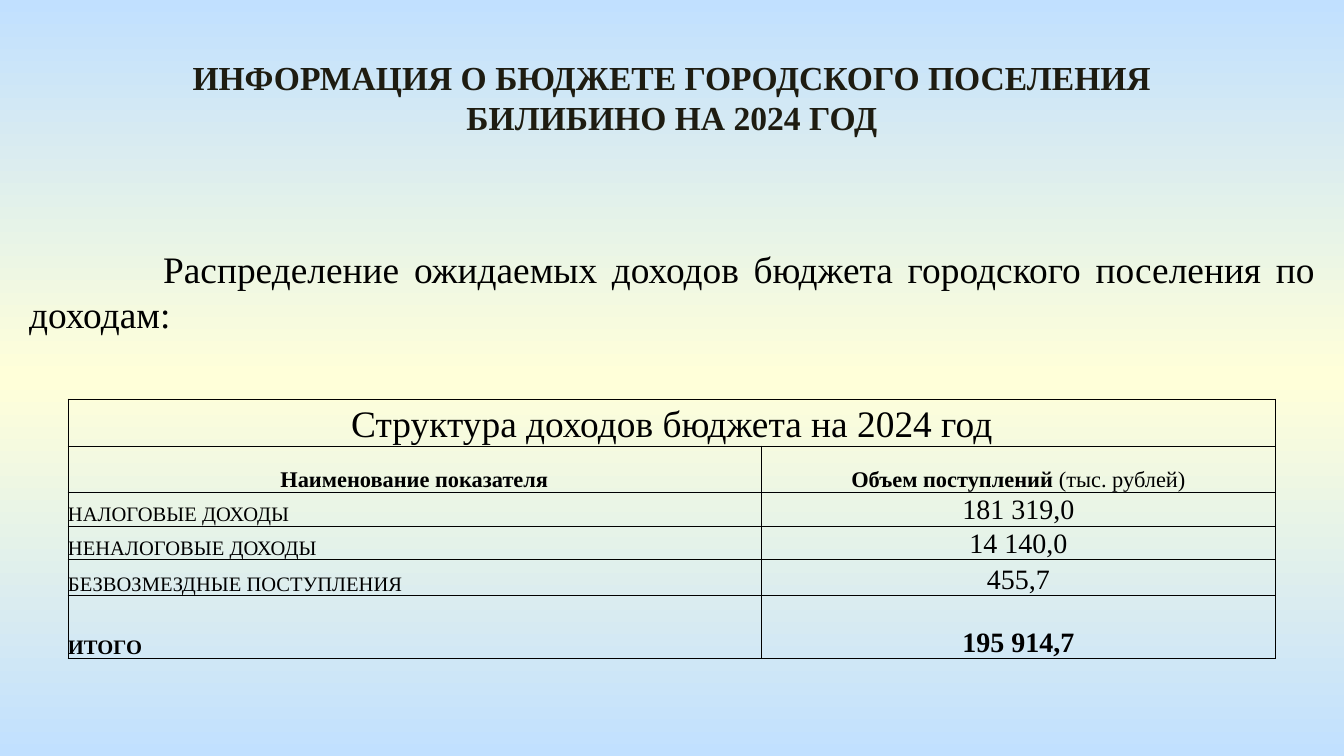
from copy import deepcopy
from dataclasses import dataclass

from lxml import etree
from pptx import Presentation
from pptx import util as u
from pptx.dml.color import RGBColor
from pptx.enum import shapes, text
from pptx.oxml import ns

PX = 914400 / 134.4


@dataclass(frozen=True)
class Theme:
    font: str = "Times New Roman"
    ink: str = "000000"
    title_ink: str = "1E1C11"
    sky: str = "C1E0FF"
    cream: str = "FFFFD9"
    title: int = 18
    lead: int = 20
    header: int = 12
    label: int = 11
    value: int = 15
    border: float = 0.5


THEME = Theme()
LEFT, CENTER = text.PP_ALIGN.LEFT, text.PP_ALIGN.CENTER
COLUMNS = [693, 515]
ROWS = [47, 46, 34, 34, 36, 63]
CAPTION = "Структура доходов бюджета на 2024 год"
INCOME = [
    ("НАЛОГОВЫЕ ДОХОДЫ", "181 319,0"),
    ("НЕНАЛОГОВЫЕ ДОХОДЫ", "14 140,0"),
    ("БЕЗВОЗМЕЗДНЫЕ ПОСТУПЛЕНИЯ", "455,7"),
    ("ИТОГО", "195 914,7"),
]


def px(length):
    return u.Emu(round(length * PX))


def style(paragraph, size, align, bold=False, color=THEME.ink):
    paragraph.alignment = align
    font = paragraph.font
    font.name, font.size, font.bold = THEME.font, u.Pt(size), bold
    font.color.rgb = RGBColor.from_string(color)


def paint_background(slide):
    """Vertical gradient: sky, cream in the middle, sky again."""
    fill = slide.background.fill
    fill.gradient()
    fill.gradient_angle = 90
    stop_list = slide.element.xpath(".//a:gsLst")[0]
    stop_list.append(deepcopy(stop_list[0]))
    colors = (THEME.sky, THEME.cream, THEME.sky)
    for stop, position, color in zip(fill.gradient_stops, (0, 0.5, 1), colors):
        stop.position = position
        stop.color.rgb = RGBColor.from_string(color)


def fill_text(shape, words):
    """Writes wrapped text from the top of the shape and returns the paragraph."""
    frame = shape.text_frame
    frame.text = words
    frame.word_wrap = True
    frame.auto_size = text.MSO_AUTO_SIZE.NONE
    frame.vertical_anchor = text.MSO_ANCHOR.TOP
    return frame.paragraphs[0]


def add_title(slide, box, words):
    title = slide.shapes.title
    title.left, title.top, title.width, title.height = map(px, box)
    style(fill_text(title, words), THEME.title, CENTER, True, THEME.title_ink)


def add_lead(slide, box, words, indent):
    """Justified text on a rectangle that shows the slide background."""
    panel = slide.shapes.add_shape(shapes.MSO_SHAPE.RECTANGLE, *map(px, box))
    panel.shadow.inherit = False
    panel.line.fill.background()
    panel.element.set("useBgFill", "1")
    paragraph = fill_text(panel, words)
    style(paragraph, THEME.lead, text.PP_ALIGN.JUSTIFY)
    paragraph._p.get_or_add_pPr().set("indent", str(px(indent)))


def outline(cell):
    properties = cell._tc.get_or_add_tcPr()
    for side in ("lnL", "lnR", "lnT", "lnB"):
        line = etree.SubElement(properties, ns.qn(f"a:{side}"), w=str(u.Pt(THEME.border)))
        fill = etree.SubElement(line, ns.qn("a:solidFill"))
        etree.SubElement(fill, ns.qn("a:srgbClr"), val=THEME.ink)


def write(cell, words, size, align=CENTER, bold=False):
    cell.text = words
    paragraph = cell.text_frame.paragraphs[0]
    style(paragraph, size, align, bold)
    return paragraph


def add_income_table(slide, left, top):
    frame = slide.shapes.add_table(
        len(ROWS), len(COLUMNS), px(left), px(top), px(sum(COLUMNS)), px(sum(ROWS)))
    table = frame.table
    table.first_row = table.horz_banding = False
    for column, width in zip(table.columns, COLUMNS):
        column.width = px(width)
    for row, height in zip(table.rows, ROWS):
        row.height = px(height)
    for cell in table.iter_cells():
        cell.margin_left = cell.margin_right = cell.margin_top = cell.margin_bottom = 0
        cell.vertical_anchor = text.MSO_ANCHOR.BOTTOM
        outline(cell)
        cell.fill.background()

    table.cell(0, 0).merge(table.cell(0, 1))
    write(table.cell(0, 0), CAPTION, THEME.lead)
    write(table.cell(1, 0), "Наименование показателя", THEME.header, bold=True)
    volume = write(table.cell(1, 1), "Объем поступлений ", THEME.header, bold=True)
    unit = volume.add_run()
    unit.text = "(тыс. рублей)"
    unit.font.bold = False
    for row, (label, value) in enumerate(INCOME, start=2):
        total = row == len(ROWS) - 1
        write(table.cell(row, 0), label, THEME.label, LEFT, total)
        write(table.cell(row, 1), value, THEME.value, bold=total)


def main():
    presentation = Presentation()
    presentation.slide_width, presentation.slide_height = px(1344), px(756)
    slide = presentation.slides.add_slide(presentation.slide_layouts[5])
    paint_background(slide)
    add_lead(
        slide, (16, 240, 1313, 104),
        "Распределение ожидаемых доходов бюджета городского поселения по доходам:",
        indent=134)
    add_title(
        slide, (152, 50, 1040, 95),
        "ИНФОРМАЦИЯ О БЮДЖЕТЕ ГОРОДСКОГО ПОСЕЛЕНИЯ БИЛИБИНО НА 2024 ГОД")
    add_income_table(slide, 68, 399)
    presentation.save("out.pptx")


if __name__ == "__main__":
    main()
